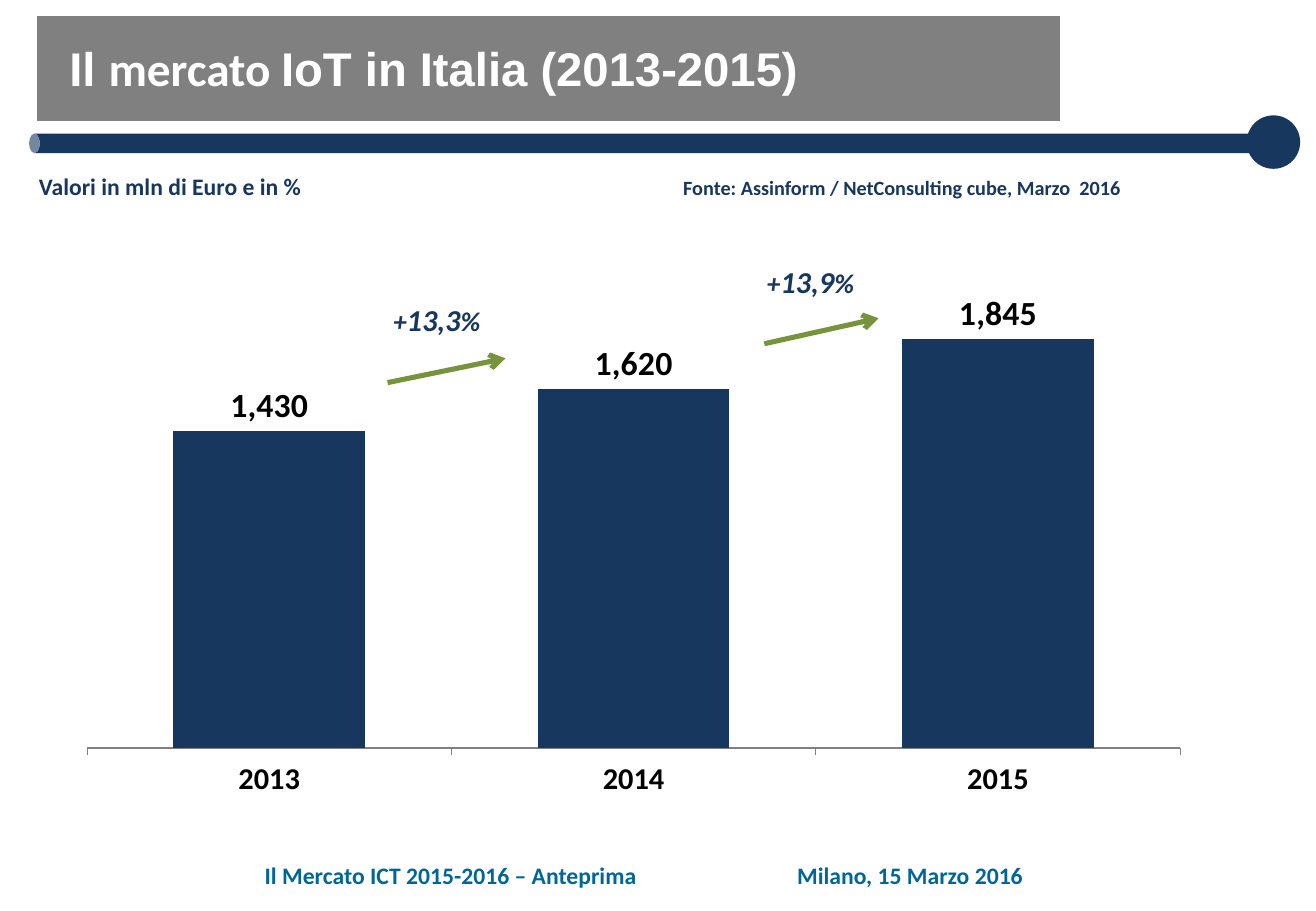
"""Build the slide on the Italian IoT market, 2013-2015."""
from dataclasses import dataclass

from lxml import etree
from pptx import Presentation
from pptx import util as u
from pptx.chart.data import CategoryChartData
from pptx.dml.color import RGBColor
from pptx.enum import chart as ch
from pptx.enum import shapes, text
from pptx.oxml import parse_xml
from pptx.oxml.ns import nsdecls, qn

NAVY, GREY, WHITE, BLACK = "17375E", "808080", "FFFFFF", "000000"
GREEN, TEAL = "77933C", "006699"
Box = tuple[float, float, float, float]


@dataclass(frozen=True)
class Run:
    """A stretch of bold text in one format."""
    words: str
    size: float
    color: str = NAVY
    font: str = "Calibri"
    italic: bool = False


@dataclass(frozen=True)
class Label:
    """A centred text box."""
    box: Box
    runs: tuple[Run, ...]


@dataclass(frozen=True)
class Decoration:
    """A filled shape of the header."""
    kind: shapes.MSO_SHAPE
    box: Box
    fill: str
    line: str | None = None
    rotation: float = 0
    adjustment: float | None = None


@dataclass(frozen=True)
class Arrow:
    """An arrow between two bars."""
    start: tuple[float, float]
    end: tuple[float, float]


def growth(value: str) -> tuple[Run, ...]:
    """Return the runs of a growth rate."""
    return (Run("+", 16, italic=True), Run(value, 18, italic=True),
            Run("%", 16, italic=True))


DECORATIONS = (
    Decoration(shapes.MSO_SHAPE.CAN, (5.21, -3.87, 0.16, 10.1), NAVY,
               rotation=270, adjustment=0.55),
    Decoration(shapes.MSO_SHAPE.RECTANGLE, (0.3, 0.13, 8.43, 0.87), GREY, WHITE),
    Decoration(shapes.MSO_SHAPE.OVAL, (10.26, 0.95, 0.44, 0.44), NAVY),
)
TITLE = (Run("Il ", 28, WHITE, "Arial"), Run("mercato ", 28, WHITE),
         Run("IoT in Italia (2013-2015)", 28, WHITE, "Arial"))
LABELS = (
    Label((2.03, 7.04, 3.36, 0.34),
          (Run("Il Mercato ICT 2015-2016 – Anteprima", 14, TEAL),)),
    Label((6.4, 7.04, 2.18, 0.34), (Run("Milano, 15 Marzo 2016", 14, TEAL),)),
    Label((3.13, 2.43, 0.93, 0.4), growth("13,3")),
    Label((0.21, 1.37, 2.38, 0.34), (Run("Valori in mln di Euro e in %", 14),)),
    Label((5.5, 1.39, 3.85, 0.3),
          (Run("Fonte: Assinform / NetConsulting cube, Marzo  2016", 12),)),
    Label((6.19, 2.12, 0.96, 0.4), growth("13,9")),
)
ARROWS = (Arrow((3.19, 3.15), (4.16, 2.95)), Arrow((6.29, 2.83), (7.23, 2.62)))
MARKET = {"2013": 1430, "2014": 1620, "2015": 1845}
PLOT = {"x": 0.02, "y": 0.02, "w": 0.96, "h": 0.86}


def rgb(color: str) -> RGBColor:
    """Turn a hex string into a colour."""
    return RGBColor.from_string(color)


def inches(values: tuple[float, ...]) -> list[u.Length]:
    """Turn numbers into lengths."""
    return [u.Inches(v) for v in values]


def set_font(font, size: float, color: str, **formats) -> None:
    """Apply size, colour and further formats to a font."""
    for name, value in {"size": u.Pt(size), "bold": True, **formats}.items():
        setattr(font, name, value)
    font.color.rgb = rgb(color)


def add_runs(p, runs: tuple[Run, ...]) -> None:
    """Write formatted runs into a paragraph."""
    for run in runs:
        r = p.add_run()
        r.text = run.words
        set_font(r.font, run.size, run.color, name=run.font, italic=run.italic)


def add_decoration(s, item: Decoration) -> None:
    """Draw one header shape."""
    sp = s.shapes.add_shape(item.kind, *inches(item.box))
    sp.shadow.inherit = False
    sp.rotation = item.rotation
    sp.fill.solid()
    sp.fill.fore_color.rgb = rgb(item.fill)
    if item.adjustment is not None:
        sp.adjustments[0] = item.adjustment
    if item.line:
        sp.line.color.rgb = rgb(item.line)
        sp.line.width = u.Pt(0.75)
    else:
        sp.line.fill.background()


def place_title(s) -> None:
    """Move the title in front of the header and fill it."""
    sp = s.shapes.title
    s.shapes.element.append(sp.element)
    sp.left, sp.top, sp.width, sp.height = inches((0.47, 0.36, 10.36, 1))
    tf = sp.text_frame
    tf.vertical_anchor = text.MSO_ANCHOR.TOP
    p = tf.paragraphs[0]
    p.alignment = text.PP_ALIGN.LEFT
    p.line_spacing = 0.8
    add_runs(p, TITLE)


def add_label(s, item: Label) -> None:
    """Draw one text box."""
    tf = s.shapes.add_textbox(*inches(item.box)).text_frame
    tf.word_wrap = False
    p = tf.paragraphs[0]
    p.alignment = text.PP_ALIGN.CENTER
    add_runs(p, item.runs)


def add_arrow(s, item: Arrow) -> None:
    """Draw one arrow."""
    sp = s.shapes.add_connector(shapes.MSO_CONNECTOR.STRAIGHT,
                                *inches(item.start + item.end))
    sp.line.color.rgb = rgb(GREEN)
    sp.line.width = u.Pt(3)
    etree.SubElement(sp.line._get_or_add_ln(), qn("a:tailEnd"), type="arrow")
    etree.SubElement(sp.element.spPr, qn("a:effectLst"))


def add_market_chart(s) -> None:
    """Draw the column chart of the market values."""
    data = CategoryChartData()
    data.categories = list(MARKET)
    data.add_series("Series 1", list(MARKET.values()))
    chart = s.shapes.add_chart(ch.XL_CHART_TYPE.COLUMN_CLUSTERED,
                               *inches((0.53, 2.41, 9.37, 4.26)), data).chart
    chart.has_legend = chart.has_title = False
    set_font(chart.font, 18, BLACK, name="Arial", bold=False)

    axis = chart.category_axis
    axis.major_tick_mark = ch.XL_TICK_MARK.OUTSIDE
    axis.format.line.color.rgb = rgb(GREY)
    set_font(axis.tick_labels.font, 18, BLACK, name="Calibri")
    for name, value in {"visible": False, "minimum_scale": 0, "maximum_scale": 2000,
                        "has_major_gridlines": False}.items():
        setattr(chart.value_axis, name, value)

    plot = chart.plots[0]
    plot.gap_width = 90
    plot.vary_by_categories = False
    fill = plot.series[0].format.fill
    fill.solid()
    fill.fore_color.rgb = rgb(NAVY)
    labels = plot.series[0].data_labels
    for name, value in {"show_value": True, "number_format": "#,##0",
                        "number_format_is_linked": False,
                        "position": ch.XL_LABEL_POSITION.OUTSIDE_END}.items():
        setattr(labels, name, value)
    set_font(labels.font, 20, BLACK, name="Calibri")

    modes = "".join(f'<c:{k}Mode val="edge"/>' for k in "xy")
    sizes = "".join(f'<c:{k} val="{v}"/>' for k, v in PLOT.items())
    area = chart.element.find(".//" + qn("c:plotArea"))
    for old in area.findall(qn("c:layout")):
        area.remove(old)
    area.insert(0, parse_xml(
        f'<c:layout {nsdecls("c")}><c:manualLayout><c:layoutTarget val="inner"/>'
        f"{modes}{sizes}</c:manualLayout></c:layout>"))


def main() -> None:
    """Build and save the slide."""
    prs = Presentation()
    prs.slide_width, prs.slide_height = inches((10.83, 7.5))
    s = prs.slides.add_slide(prs.slide_layouts.get_by_name("Title Only"))
    for item in DECORATIONS:
        add_decoration(s, item)
    place_title(s)
    add_market_chart(s)
    for item in LABELS:
        add_label(s, item)
    for item in ARROWS:
        add_arrow(s, item)
    prs.save("out.pptx")


if __name__ == "__main__":
    main()
